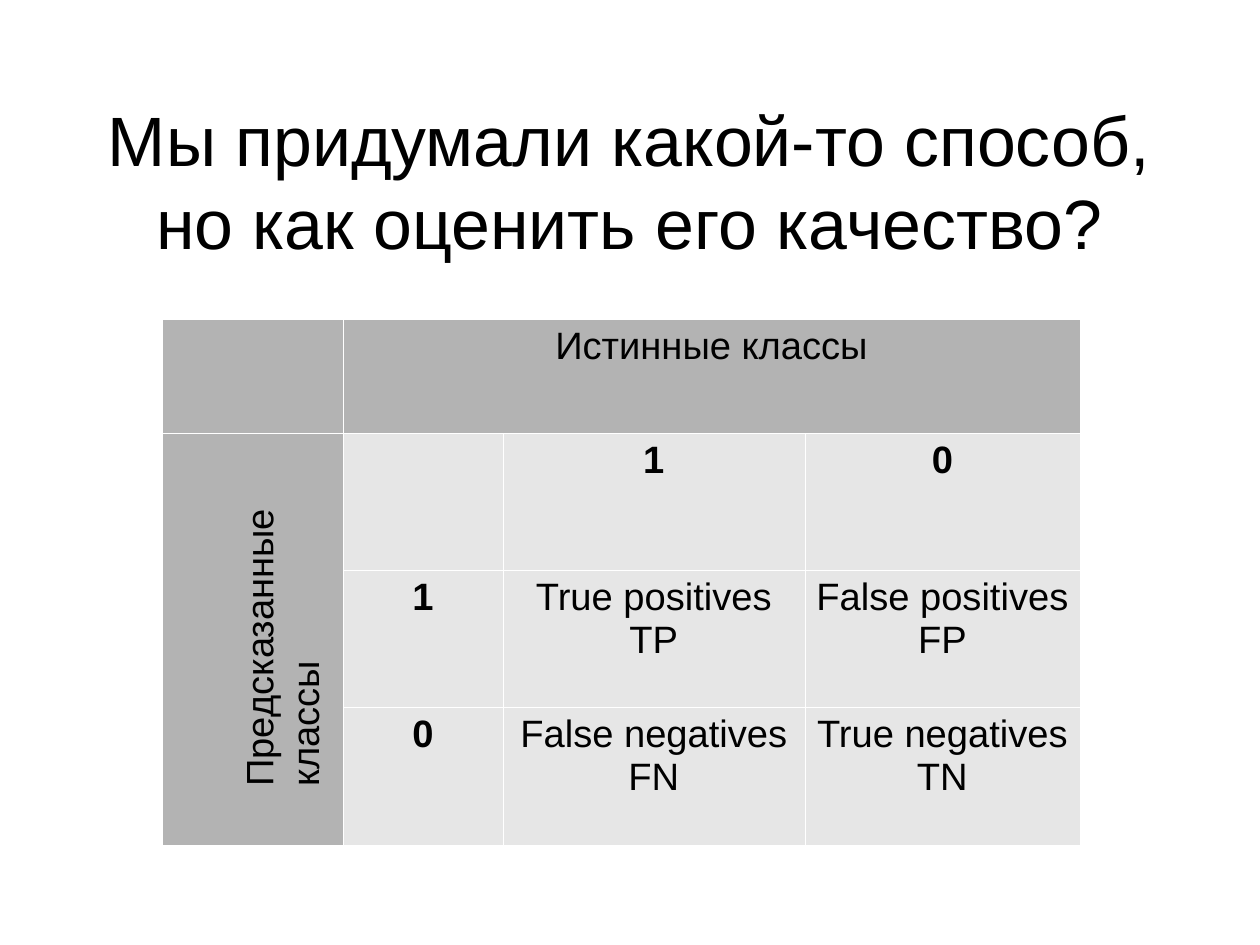
from lxml.etree import SubElement as Sub
from pptx import Presentation
from pptx.dml.color import RGBColor as Rgb
from pptx.enum.text import MSO_ANCHOR as Anchor, PP_ALIGN as Align
from pptx.oxml.ns import qn
from pptx.util import Inches, Pt

# The page is 28 by 21 centimetres.
PAGE = (28 / 2.54, 21 / 2.54)
TITLE = "Мы придумали какой-то способ, но как оценить его качество?"
SIDE = "Предсказанные классы"
ROWS = [
    ["", "Истинные классы", "", ""],
    ["", "", "1", "0"],
    ["", "1", "True positives TP", "False positives\nFP"],
    ["", "0", "False negatives\nFN", "True negatives\nTN"],
]
MERGES = [((0, 1), (0, 3)), ((1, 0), (3, 0))]
WIDTHS = [1.58, 1.4, 2.64, 2.41]
HEIGHTS = [1, 1.2, 1.2, 1.2]
COLORS = {"text": "000000", "head": "B3B3B3", "body": "E6E6E6", "line": "FFFFFF"}


def write(frame, text, size=24, bold=False, align=Align.CENTER):
    frame.text = text
    frame.word_wrap = True
    for par in frame.paragraphs:
        par.alignment = align
        font = par.font
        font.name, font.size, font.bold = "Arial", Pt(size), bold
        font.color.rgb = Rgb.from_string(COLORS["text"])


def inset(box, left, top, right, bottom):
    box.margin_left, box.margin_top = Inches(left), Inches(top)
    box.margin_right, box.margin_bottom = Inches(right), Inches(bottom)


def edge(cell):
    """Draw a hairline on all four sides; runs before the fill is set."""
    props = cell._tc.get_or_add_tcPr()
    for tag in ("a:lnL", "a:lnR", "a:lnT", "a:lnB"):
        line = Sub(props, qn(tag), w=str(Pt(0.06)))
        fill = Sub(line, qn("a:solidFill"))
        Sub(fill, qn("a:srgbClr"), val=COLORS["line"])


def main():
    prs = Presentation()
    prs.slide_width, prs.slide_height = map(Inches, PAGE)
    # The template marks its size as a 4:3 screen, which no longer holds.
    prs.element.sldSz.attrib.pop("type", None)
    slide = prs.slides.add_slide(prs.slide_layouts[5])

    title = slide.shapes.title
    title.left, title.top = Inches(0.55), Inches(0.31)
    title.width, title.height = Inches(9.92), Inches(2.53)
    frame = title.text_frame
    write(frame, TITLE, size=44)
    frame.vertical_anchor = Anchor.MIDDLE
    inset(frame, 0, 0, 0, 0)

    grid = slide.shapes.add_table(
        len(ROWS), len(WIDTHS), Inches(1.42), Inches(2.79),
        Inches(sum(WIDTHS)), Inches(sum(HEIGHTS))).table
    for col, width in zip(grid.columns, WIDTHS):
        col.width = Inches(width)
    for row, height in zip(grid.rows, HEIGHTS):
        row.height = Inches(height)
    for r, row in enumerate(ROWS):
        for c, text in enumerate(row):
            cell = grid.cell(r, c)
            write(cell.text_frame, text, bold=text.isdigit())
            inset(cell, 0.1, 0.05, 0.1, 0.05)
            edge(cell)
            cell.fill.solid()
            shade = COLORS["body" if r and c else "head"]
            cell.fill.fore_color.rgb = Rgb.from_string(shade)
    for start, end in MERGES:
        grid.cell(*start).merge(grid.cell(*end))

    side = slide.shapes.add_textbox(
        Inches(0.54), Inches(4.67), Inches(3.78), Inches(0.84))
    side.rotation = 270
    write(side.text_frame, SIDE, align=Align.LEFT)
    inset(side.text_frame, 0.1, 0.05, 0.1, 0.05)

    prs.save("out.pptx")


if __name__ == "__main__":
    main()
